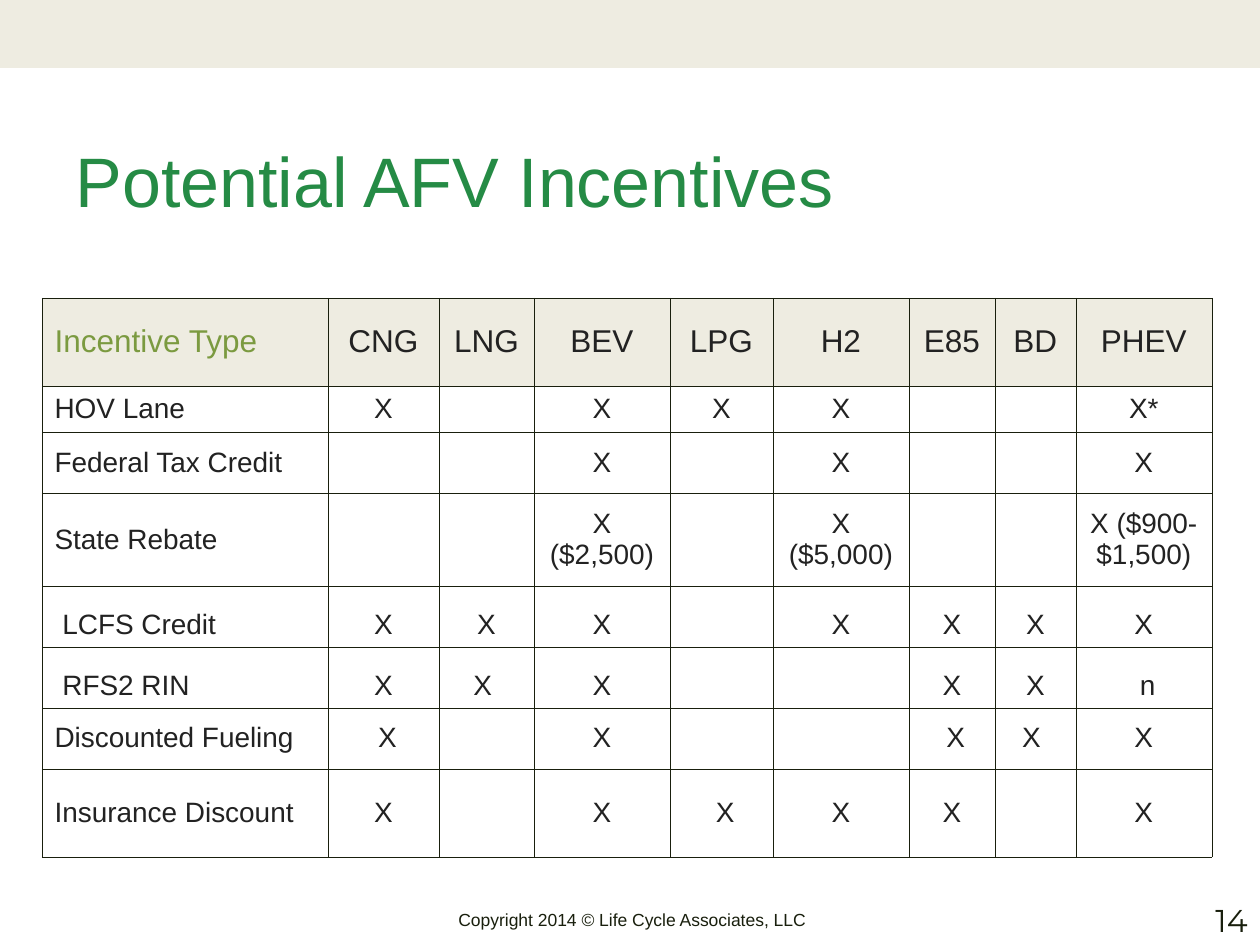
"""Build the Potential AFV Incentives slide with its table of incentives by fuel."""
import pptx
import pptx.util
import pptx.dml.color
import pptx.enum.shapes
import pptx.enum.text
import lxml.etree

RGBColor = pptx.dml.color.RGBColor
ALIGN = pptx.enum.text.PP_ALIGN
ANCHOR = pptx.enum.text.MSO_ANCHOR
BAND = RGBColor(0xEE, 0xEC, 0xE1)
INK = RGBColor(0x19, 0x1F, 0x0D)
GRAY = RGBColor(0x22, 0x22, 0x22)
GREEN = RGBColor(0x25, 0x8B, 0x45)
OLIVE = RGBColor(0x7B, 0x9A, 0x40)
NS = "http://schemas.openxmlformats.org/drawingml/2006/main"

COLS = [286, 111, 95, 136, 103, 136, 86, 81, 136]
HEIGHTS = [88, 46, 61, 93, 61, 61, 61, 88]
ROWS = [
    ["Incentive Type", "CNG", "LNG", "BEV", "LPG", "H2", "E85", "BD", "PHEV"],
    ["HOV Lane", "X", "", "X", "X", "X", "", "", "X*"],
    ["Federal Tax Credit", "", "", "X", "", "X", "", "", "X"],
    ["State Rebate", "", "", "X ($2,500)", "", "X ($5,000)", "", "", "X ($900-$1,500)"],
    [" LCFS Credit", "X", "X", "X", "", "X", "X", "X", "X"],
    [" RFS2 RIN", "X", "X ", "X", "", "", "X", "X", " n"],
    ["Discounted Fueling", " X", "", "X", "", "", " X", "X ", "X"],
    ["Insurance Discount", "X", "", "X", " X", "X", "X", "", "X"],
]
BOTTOM_ROWS = (4, 5)


def box(*lengths):
    return [round(n * 914400 / 126) for n in lengths]


def write(tf, text, size, color, align=ALIGN.LEFT, font="Arial"):
    p = tf.paragraphs[0]
    p.text = text
    p.alignment = align
    p.font.size = pptx.util.Pt(size)
    p.font.name = font
    p.font.color.rgb = color


prs = pptx.Presentation()
prs.slide_width, prs.slide_height = box(1260, 945)
s = prs.slides.add_slide(prs.slide_layouts[5])

sp = s.shapes.add_shape(pptx.enum.shapes.MSO_SHAPE.RECTANGLE, *box(0, 0, 1260, 68))
sp.shadow.inherit = False
sp.fill.solid()
sp.fill.fore_color.rgb = BAND
sp.line.fill.background()

title = s.shapes.title
title.left, title.top, title.width, title.height = box(63, 132, 1134, 96)
title.text_frame.vertical_anchor = ANCHOR.MIDDLE
write(title.text_frame, "Potential AFV Incentives", 40, GREEN)

table = s.shapes.add_table(len(ROWS), len(COLS), *box(42, 298, sum(COLS), sum(HEIGHTS))).table
table.first_row = table.horz_banding = False
for col, width in zip(table.columns, box(*COLS)):
    col.width = width
for row, height in zip(table.rows, box(*HEIGHTS)):
    row.height = height

for i, values in enumerate(ROWS):
    for j, text in enumerate(values):
        cell = table.cell(i, j)
        cell.vertical_anchor = ANCHOR.BOTTOM if i in BOTTOM_ROWS else ANCHOR.MIDDLE
        write(cell.text_frame, text, 16 if i else 18,
              OLIVE if i == j == 0 else GRAY,
              ALIGN.CENTER if j else ALIGN.LEFT)
        tcPr = cell._tc.get_or_add_tcPr()
        for side in ("lnL", "lnR", "lnT", "lnB"):
            ln = lxml.etree.SubElement(tcPr, f"{{{NS}}}{side}", w=str(pptx.util.Pt(0.25)))
            fill = lxml.etree.SubElement(ln, f"{{{NS}}}solidFill")
            lxml.etree.SubElement(fill, f"{{{NS}}}srgbClr", val=str(INK))
        if i == 0:
            cell.fill.solid()
            cell.fill.fore_color.rgb = BAND
        else:
            cell.fill.background()

for lengths, text, size, align, font, wrap in [
    ((446, 902, 373, 34), "Copyright 2014 © Life Cycle Associates, LLC", 10, ALIGN.LEFT, "Arial", False),
    ((966, 882, 294, 63), "14", 18, ALIGN.RIGHT, "Montserrat", True),
]:
    tf = s.shapes.add_textbox(*box(*lengths)).text_frame
    tf.word_wrap = wrap
    tf.vertical_anchor = ANCHOR.BOTTOM
    write(tf, text, size, INK, align, font)

prs.save("out.pptx")
